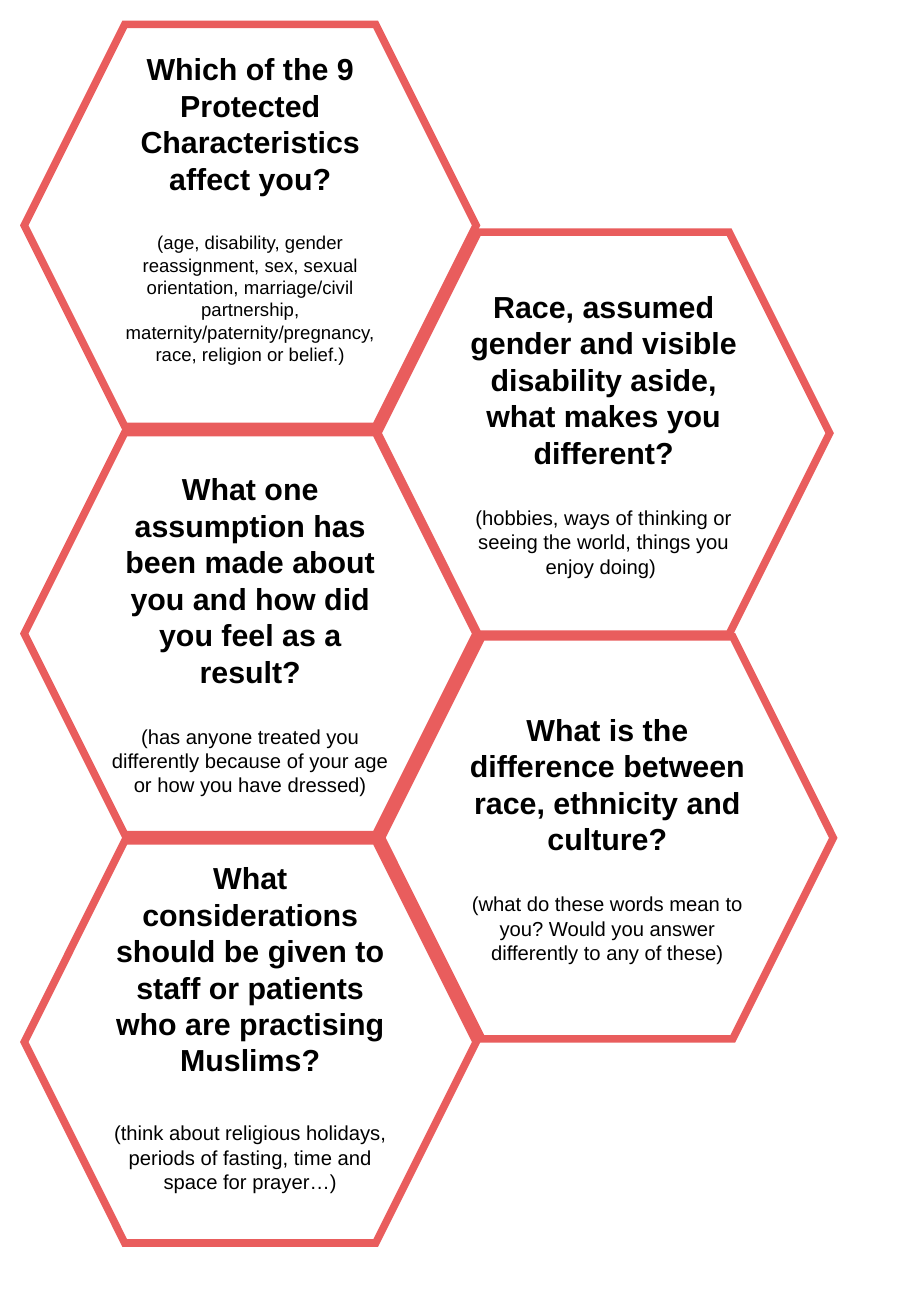
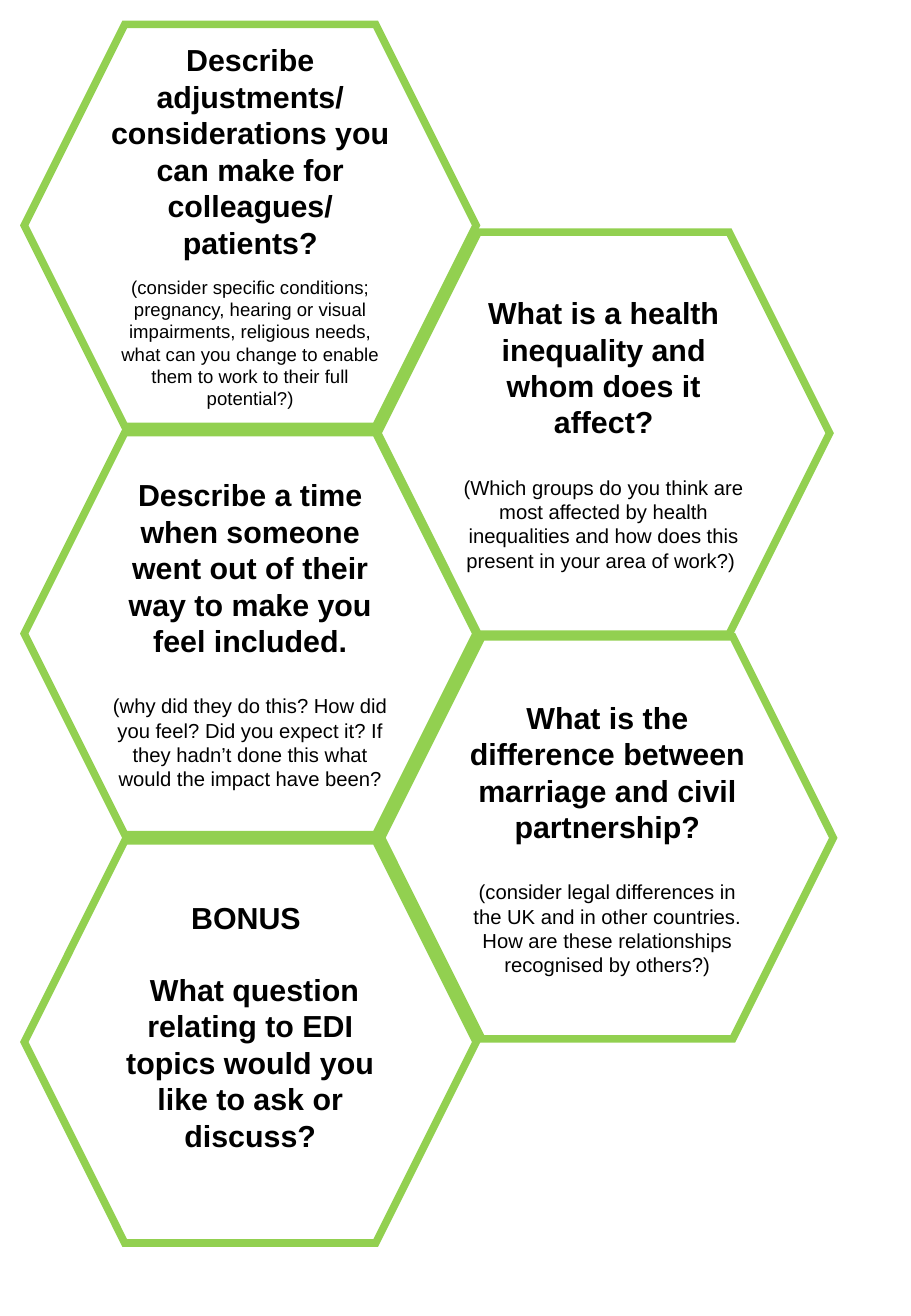
from lxml import etree
from pptx import Presentation
from pptx.dml.color import RGBColor
from pptx.enum import shapes, text
from pptx.oxml import ns
from pptx.util import Inches, Pt

HUES = {"coral": "E95D5D", "lime": "92D050", "white": "FFFFFF", "black": "000000"}
LEAD = 1.15
HEAD = {"size": Pt(18), "bold": True}
NOTE = {"size": Pt(12), "bold": False}
SMALL = {"size": Pt(11), "bold": False}


def hue(name):
    return RGBColor.from_string(HUES[name])


def apply(item, values):
    for key, value in values.items():
        setattr(item, key, value)


class Deck:
    wide, high = 3.72, 3.31
    edge = 0.2
    cols = (
        {"left": 0.2, "top": 0.2, "shift": 0, "step": 3.36},
        {"left": 3.11, "top": 1.91, "shift": 0.03, "step": 3.33},
    )
    face = {"name": "Arial"}

    def __init__(self):
        self.prs = Presentation()
        apply(self.prs, {"slide_width": Inches(7.5), "slide_height": Inches(10.83)})

    def page(self, tint):
        self.slide = self.prs.slides.add_slide(self.prs.slide_layouts[6])
        self.tint = tint

    def hexagon(self, col, row):
        grid = self.cols[col]
        left = grid["left"] + row * grid["shift"]
        top = grid["top"] + row * grid["step"]
        box = self.slide.shapes.add_shape(
            shapes.MSO_SHAPE.HEXAGON,
            *map(Inches, (left, top, self.wide, self.high)))
        box.shadow.inherit = False
        box.fill.solid()
        box.fill.fore_color.rgb = hue("white")
        box.line.color.rgb = hue(self.tint)
        box.line.width = Pt(4.5)
        line = box.line.fill._xPr
        etree.SubElement(line, ns.qn("a:miter"), lim="800000")
        return box

    def words(self, para, line, style):
        para.alignment = text.PP_ALIGN.CENTER
        run = para.add_run()
        run.text = line
        apply(run.font, {**self.face, **style})
        run.font.color.rgb = hue("black")

    def card(self, col, row, head, note, style=NOTE, gap=18, tail=0):
        frame = self.hexagon(col, row).text_frame
        apply(frame, {
            "word_wrap": True,
            "vertical_anchor": text.MSO_ANCHOR.MIDDLE,
            "margin_bottom": Inches(0.05) + Pt(tail * LEAD),
        })
        self.words(frame.paragraphs[0], head, HEAD)
        para = frame.add_paragraph()
        para.space_before = Pt(gap * LEAD)
        self.words(para, note, style)

    def board(self, tint, cards):
        self.page(tint)
        for spot, (head, note, extra) in enumerate(cards):
            self.card(spot % 2, spot // 2, head, note, **extra)


BOARDS = {
    "coral": [
        ("Which of the 9 Protected Characteristics affect you?",
         "(age, disability, gender reassignment, sex, sexual orientation, "
         "marriage/civil partnership, maternity/paternity/pregnancy, race, "
         "religion or belief.)",
         {"style": SMALL, "tail": 18}),
        ("Race, assumed gender and visible disability aside, "
         "what makes you different?",
         "(hobbies, ways of thinking or seeing the world, things you enjoy doing) ",
         {}),
        ("What one assumption has been made about you and "
         "how did you feel as a result?",
         "(has anyone treated you differently because of your age "
         "or how you have dressed)",
         {}),
        ("What is the difference between race, ethnicity and culture?",
         "(what do these words mean to you? Would you answer differently "
         "to any of these)",
         {}),
        ("What considerations should be given to staff or patients "
         "who are practising Muslims?",
         "(think about religious holidays, periods of fasting, time and "
         "space for prayer…)",
         {"gap": 22, "tail": 16}),
    ],
    "lime": [
        ("Describe adjustments/ considerations you can make for "
         "colleagues/ patients?",
         "(consider specific conditions; pregnancy, hearing or visual "
         "impairments, religious needs, what can you change to enable them "
         "to work to their full potential?)",
         {"style": SMALL, "gap": 8}),
        ("What is a health inequality and whom does it affect?",
         "(Which groups do you think are most affected by health inequalities "
         "and how does this present in your area of work?) ",
         {}),
        ("Describe a time when someone went out of their way to make you "
         "feel included.",
         "(why did they do this? How did you feel? Did you expect it? "
         "If they hadn’t done this what would the impact have been?",
         {}),
        ("What is the difference between marriage and civil partnership?",
         "(consider legal differences in the UK and in other countries. "
         "How are these relationships recognised by others?)",
         {}),
        ("BONUS ",
         " What question relating to EDI topics would you like to ask or discuss?",
         {"style": HEAD, "tail": 16}),
    ],
}


def main():
    deck = Deck()
    for tint, cards in BOARDS.items():
        deck.board(tint, cards)
    deck.prs.save("out.pptx")


if __name__ == "__main__":
    main()
